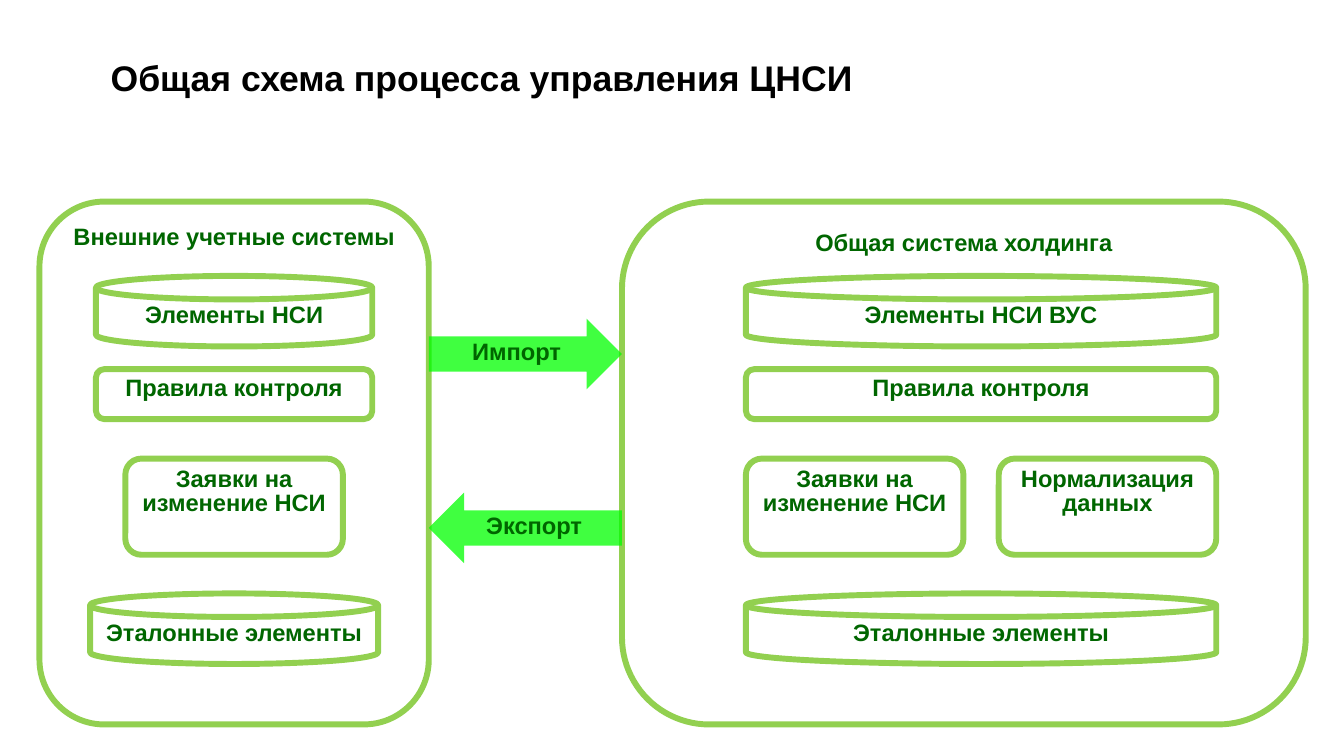
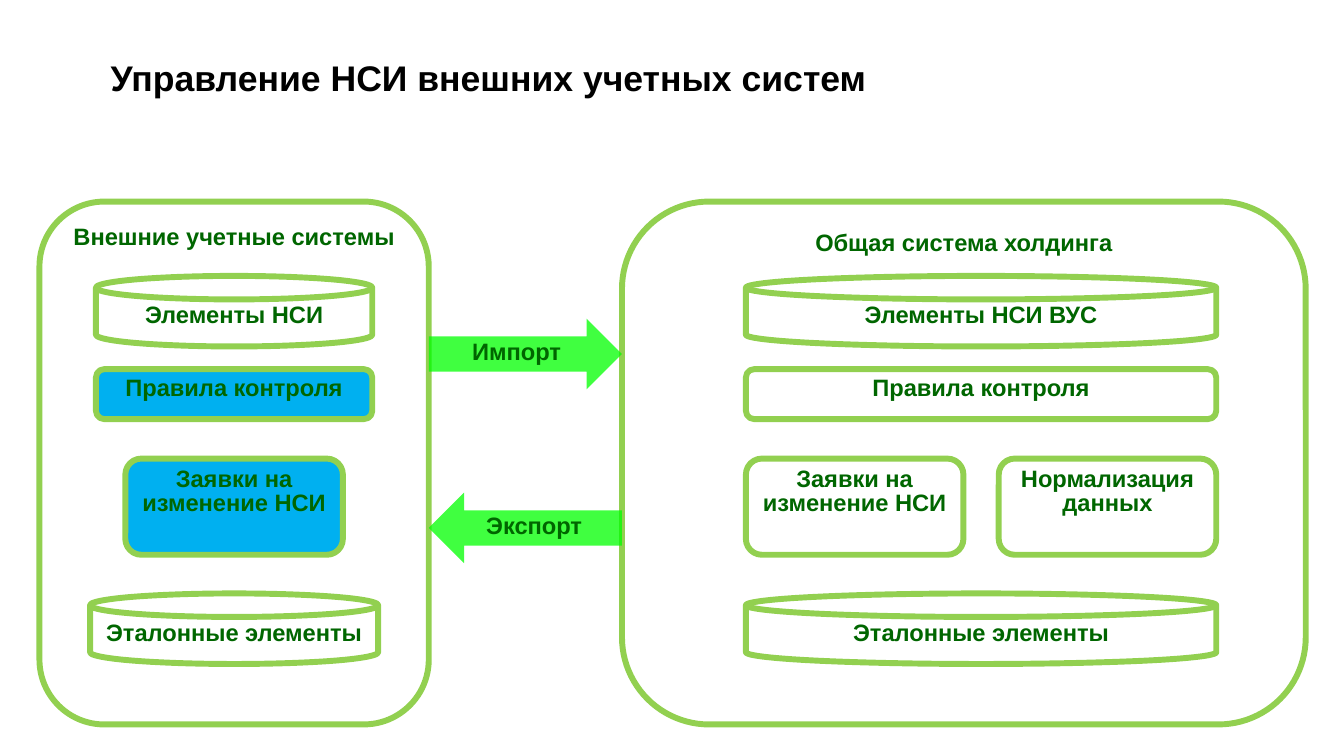
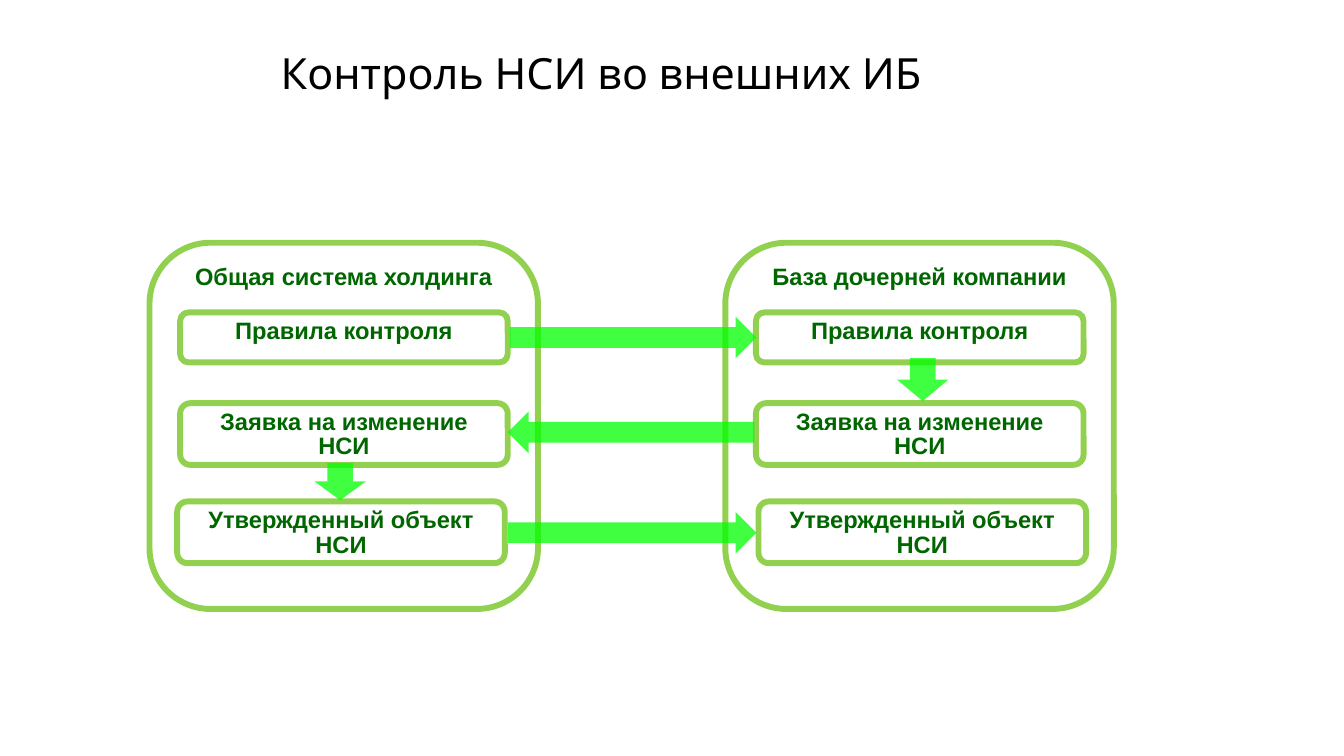
from lxml.etree import SubElement
from pptx import Presentation
from pptx.dml.color import RGBColor
from pptx.enum.shapes import MSO_SHAPE as Preset
from pptx.enum.text import MSO_ANCHOR as Anchor, MSO_AUTO_SIZE as AutoSize, PP_ALIGN as Align
from pptx.oxml.ns import qn
from pptx.util import Cm, Pt

COLORS = {
    "title": "000000",
    "label": "006600",
    "outline": "92D050",
    "arrow": "00FF00",
    "highlight": "00B0F0",
}
HOLDING = "Общая система холдинга"
RULES = "Правила контроля"
REQUESTS = "Заявки на изменение НСИ"
STANDARDS = "Эталонные элементы"


class Deck:
    """Holds the diagram style and draws on the current slide."""

    def __init__(self):
        self.presentation = Presentation()
        self.presentation.slide_width = Cm(32)
        self.presentation.slide_height = Cm(18)
        self.slide = None

    def color(self, name):
        return RGBColor.from_string(COLORS[name])

    def style(self, paragraph, align, font_name, size, color, bold):
        paragraph.alignment = align
        for run in paragraph.runs:
            run.font.name = font_name
            run.font.size = Pt(size)
            run.font.bold = bold
            run.font.color.rgb = self.color(color)

    def add_slide(self, heading, left=2.38, top=0.41, width=24.71,
                  font_name="Arial", size=24, bold=True):
        self.slide = self.presentation.slides.add_slide(self.presentation.slide_layouts[5])
        title = self.slide.shapes.title
        title.left, title.top, title.width, title.height = map(Cm, (left, top, width, 2.84))
        frame = title.text_frame
        frame.text = heading
        frame.word_wrap = True
        frame.auto_size = AutoSize.NONE
        frame.vertical_anchor = Anchor.MIDDLE
        self.style(frame.paragraphs[0], Align.LEFT, font_name, size, "title", bold)

    def add_shape(self, preset, left, top, width, height, label):
        shape = self.slide.shapes.add_shape(preset, *map(Cm, (left, top, width, height)))
        shape.shadow.inherit = False
        if label:
            frame = shape.text_frame
            frame.text = label
            frame.word_wrap = True
            frame.vertical_anchor = Anchor.TOP
            paragraph = frame.paragraphs[0]
            paragraph.line_spacing = 0.85
            self.style(paragraph, Align.CENTER, "Arial", 16, "label", True)
        return shape

    def add_box(self, label, left, top, width, height, fill=None, preset=Preset.ROUNDED_RECTANGLE):
        box = self.add_shape(preset, left, top, width, height, label)
        box.line.color.rgb = self.color("outline")
        box.line.width = Pt(4)
        if fill:
            box.fill.solid()
            box.fill.fore_color.rgb = self.color(fill)
        else:
            box.fill.background()

    def add_store(self, label, left, top, width):
        self.add_box(label, left, top, width, 1.68, preset=Preset.FLOWCHART_MAGNETIC_DISK)

    def add_arrow(self, preset, left, top, width, height, label=None):
        arrow = self.add_shape(preset, left, top, width, height, label)
        arrow.line.fill.background()
        arrow.fill.solid()
        arrow.fill.fore_color.rgb = self.color("arrow")
        tint = arrow.fill._xPr.find(qn("a:solidFill"))[0]
        SubElement(tint, qn("a:alpha")).set("val", "75000")


def draw_exchange(deck, external_fill=None):
    panel_top, panel_height = 4.8, 12.45
    external_left, external_width = 0.94, 9.27
    holding_left, holding_width = 14.81, 16.28
    elements_top, rules_top, requests_top, standards_top = 6.57, 8.79, 10.92, 14.13
    rules_height, request_width, request_height = 1.19, 5.18, 2.29
    column_left, column_width = 17.76, 11.2

    def centred(width):
        return external_left + (external_width - width) / 2

    deck.add_box("Внешние учетные системы", external_left, panel_top, external_width, panel_height)
    deck.add_box(HOLDING, holding_left, panel_top, holding_width, panel_height)

    gap_left = external_left + external_width
    gap_width = holding_left - gap_left
    deck.add_arrow(Preset.RIGHT_ARROW, gap_left, 7.59, gap_width, 1.68, "Импорт")
    deck.add_arrow(Preset.LEFT_ARROW, gap_left, 11.73, gap_width, 1.68, "Экспорт")

    deck.add_store("Элементы НСИ", centred(6.58), elements_top, 6.58)
    deck.add_box(RULES, centred(6.58), rules_top, 6.58, rules_height, external_fill)
    deck.add_box(REQUESTS, centred(request_width), requests_top,
                 request_width, request_height, external_fill)
    deck.add_store(STANDARDS, centred(6.86), standards_top, 6.86)

    deck.add_store("Элементы НСИ ВУС", column_left, elements_top, column_width)
    deck.add_box(RULES, column_left, rules_top, column_width, rules_height)
    deck.add_box(REQUESTS, column_left, requests_top, request_width, request_height)
    deck.add_box("Нормализация данных", column_left + column_width - request_width,
                 requests_top, request_width, request_height)
    deck.add_store(STANDARDS, column_left, standards_top, column_width)


def draw_control(deck):
    panels = [(HOLDING, 3.56, 4.22), ("База дочерней компании", 17.27, 18.06)]
    for owner, panel_left, approved_left in panels:
        step_left = panel_left + 0.73
        deck.add_box(owner, panel_left, 5.78, 9.25, 8.72)
        deck.add_box(RULES, step_left, 7.44, 7.8, 1.19)
        deck.add_box("Заявка на изменение НСИ", step_left, 9.6, 7.8, 1.47)
        deck.add_box("Утвержденный объект НСИ", approved_left, 11.94, 7.8, 1.47)

    deck.add_arrow(Preset.RIGHT_ARROW, 12.14, 7.54, 5.87, 0.99)
    deck.add_arrow(Preset.DOWN_ARROW, 21.36, 8.53, 1.22, 1.02)
    deck.add_arrow(Preset.LEFT_ARROW, 12.09, 9.8, 5.87, 0.99)
    deck.add_arrow(Preset.DOWN_ARROW, 7.49, 11.02, 1.22, 0.89)
    deck.add_arrow(Preset.RIGHT_ARROW, 12.09, 12.19, 5.92, 0.99)


def main():
    deck = Deck()
    deck.add_slide("Общая схема процесса управления ЦНСИ")
    draw_exchange(deck)
    deck.add_slide("Управление НСИ внешних учетных систем", width=21.41)
    draw_exchange(deck, "highlight")
    deck.add_slide("Контроль НСИ во внешних ИБ", 6.43, 0.3,
                   font_name="League Spartan", size=29, bold=False)
    draw_control(deck)
    deck.presentation.save("out.pptx")


if __name__ == "__main__":
    main()
